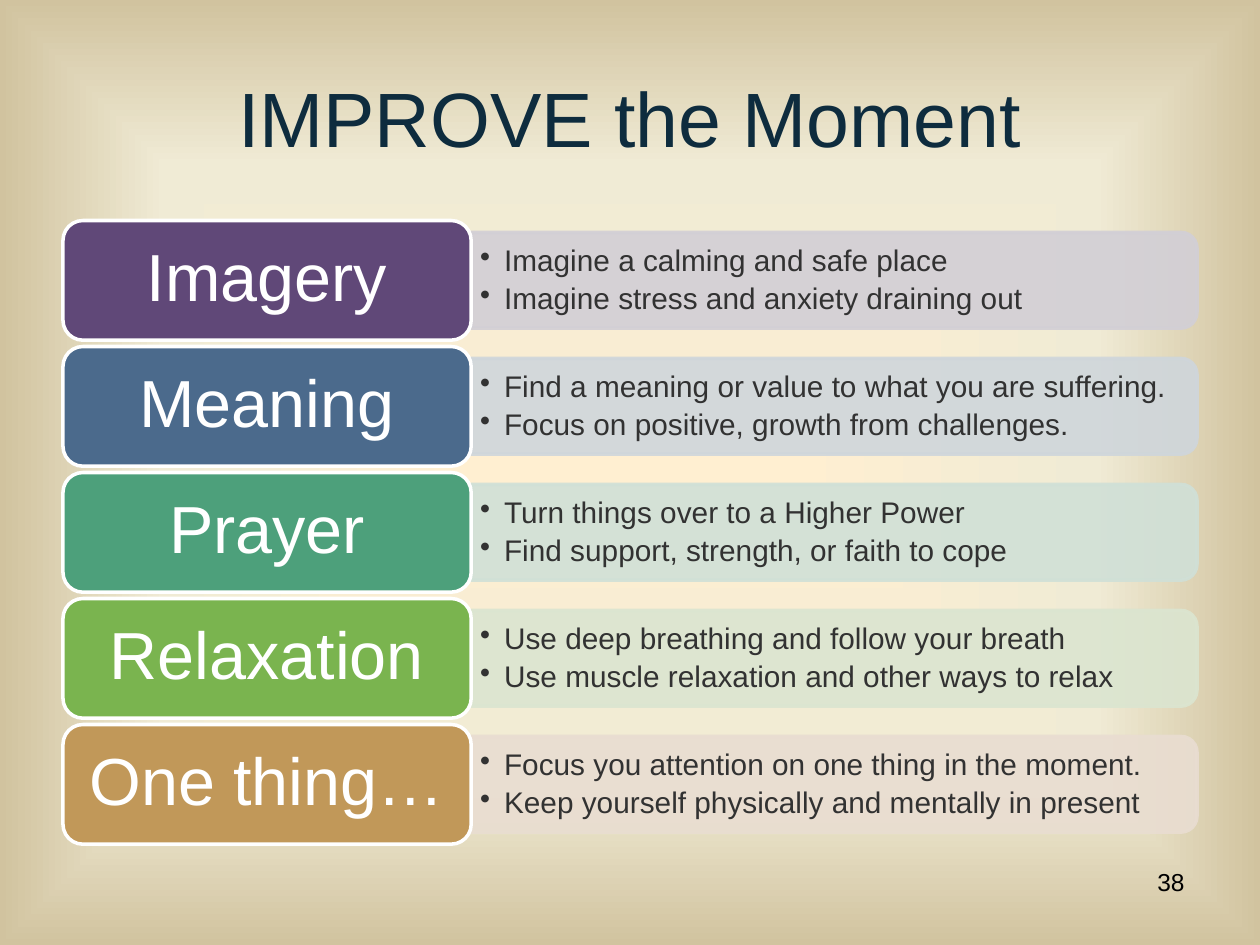
from pptx import Presentation, util as u
from pptx.dml.color import RGBColor
from pptx.enum import shapes as es, text as et
from pptx.oxml import parse_xml
from pptx.oxml.ns import qn
from lxml import etree

NS = ('xmlns:a="http://schemas.openxmlformats.org/drawingml/2006/main" '
      'xmlns:p="http://schemas.openxmlformats.org/presentationml/2006/main"')
HUE = {"title": "0E2C3E", "body": "323232", "white": "FFFFFF", "black": "000000"}
GLOW = [(0, "FFEFD1"), (65, "F0EBD5"), (100, "D1C39F")]
ROWS = [  # tag, tag colour, panel colour, points
    ("Imagery", "604878", "D2CFD6",
     ["Imagine a calming and safe place", "Imagine stress and anxiety draining out"]),
    ("Meaning", "4B6A8C", "CFD6DB",
     ["Find a meaning or value to what you are suffering.",
      "Focus on positive, growth from challenges."]),
    ("Prayer", "4DA07B", "D0E0D7",
     ["Turn things over to a Higher Power", "Find support, strength, or faith to cope"]),
    ("Relaxation", "7AB44F", "DBE5D0",
     ["Use deep breathing and follow your breath",
      "Use muscle relaxation and other ways to relax"]),
    ("One thing…", "C19859", "E9DDD1",
     ["Focus you attention on one thing in the moment.",
      "Keep yourself physically and mentally in present"]),
]
LEFT, WIDE = 0.5, 9      # content column
TOP, PITCH = 1.75, 1     # row grid
SHARE = 0.36             # tag's share of a row's width


def rgb(hue):
    return RGBColor.from_string(hue)


def put(obj, vals):
    for key, val in vals.items():
        setattr(obj, key, val)


def place(box):
    return [u.Inches(v) for v in box]


def write(shape, lines, size, hue, para, pad=(0.1, 0.05)):
    frame = shape.text_frame
    side, edge = place(pad)
    put(frame, dict(word_wrap=True, margin_left=side, margin_right=side,
                    margin_top=edge, margin_bottom=edge))
    frame.text = "\n".join(lines)
    for par in frame.paragraphs:
        put(par, para)
        put(par.font, dict(size=u.Pt(size), name="Arial"))
        par.font.color.rgb = rgb(hue)
    return frame


def paint(shape, fill, line, alpha=None):
    shape.shadow.inherit = False
    shape.fill.solid()
    shape.fill.fore_color.rgb = rgb(fill)
    shape.line.color.rgb = rgb(line)
    shape.line.width = u.Pt(2)
    if alpha:
        for clr in shape._element.spPr.iter(qn("a:srgbClr")):
            etree.SubElement(clr, qn("a:alpha"), val=str(alpha * 1000))


def backdrop(slide):
    stops = "".join(f'<a:gs pos="{pos * 1000}"><a:srgbClr val="{hue}"/></a:gs>'
                    for pos, hue in GLOW)
    slide._element.cSld.insert(0, parse_xml(
        f'<p:bg {NS}><p:bgPr><a:gradFill><a:gsLst>{stops}</a:gsLst>'
        '<a:path path="shape"><a:fillToRect l="50000" t="50000" r="50000" b="50000"/>'
        '</a:path></a:gradFill><a:effectLst/></p:bgPr></p:bg>'))


def heading(slide, box, words):
    title = slide.shapes.title
    put(title, dict(zip(("left", "top", "width", "height"), place(box))))
    frame = write(title, [words], 44, HUE["title"], dict(alignment=et.PP_ALIGN.CENTER))
    frame.vertical_anchor = et.MSO_ANCHOR.MIDDLE


def panel(group, box, hue, points):
    x, y, w, h = box
    # Turned a quarter so that the rounded end faces right
    turned = (x + (w - h) / 2, y + (h - w) / 2, h, w)
    bar = group.add_shape(es.MSO_SHAPE.ROUND_2_SAME_RECTANGLE, *place(turned))
    bar.rotation = 90
    paint(bar, hue, hue, 90)
    note = group.add_textbox(*place((x, y + 0.04, w - 0.04, h - 0.07)))
    frame = write(note, points, 17, HUE["body"],
                  dict(line_spacing=0.9, space_after=u.Pt(3)), (0.07, 0.04))
    frame.vertical_anchor = et.MSO_ANCHOR.MIDDLE
    dent = u.Inches(0.19)
    for par in frame.paragraphs:
        prop = par._p.get_or_add_pPr()
        prop.set("marL", str(dent))
        prop.set("indent", str(-dent))
        etree.SubElement(prop, qn("a:buChar"), char="•")


def tag(group, box, hue, word):
    card = group.add_shape(es.MSO_SHAPE.ROUNDED_RECTANGLE, *place(box))
    paint(card, hue, HUE["white"])
    frame = write(card, [word], 38, HUE["white"],
                  dict(alignment=et.PP_ALIGN.CENTER, line_spacing=0.9), (0.16, 0.08))
    frame.vertical_anchor = et.MSO_ANCHOR.MIDDLE


def row(slide, box, word, dark, pale, points):
    x, y, w, h = box
    group = slide.shapes.add_group_shape().shapes
    cut = w * SHARE
    panel(group, (x + cut, y + h * 0.1, w - cut, h * 0.8), pale, points)
    tag(group, (x, y, cut, h), dark, word)


def number(slide, box, words):
    write(slide.shapes.add_textbox(*place(box)), [words], 14, HUE["black"],
          dict(alignment=et.PP_ALIGN.RIGHT))


def main():
    deck = Presentation()
    put(deck, dict(slide_width=u.Inches(10), slide_height=u.Inches(7.5)))
    slide = deck.slides.add_slide(deck.slide_layouts[5])
    backdrop(slide)
    heading(slide, (LEFT, 0.3, WIDE, 1.25), "IMPROVE the Moment")
    for i, item in enumerate(ROWS):
        row(slide, (LEFT, TOP + i * PITCH, WIDE, PITCH * 0.95), *item)
    number(slide, (7.17, 6.83, 2.33, 0.52), "38")
    deck.save("out.pptx")


if __name__ == "__main__":
    main()
